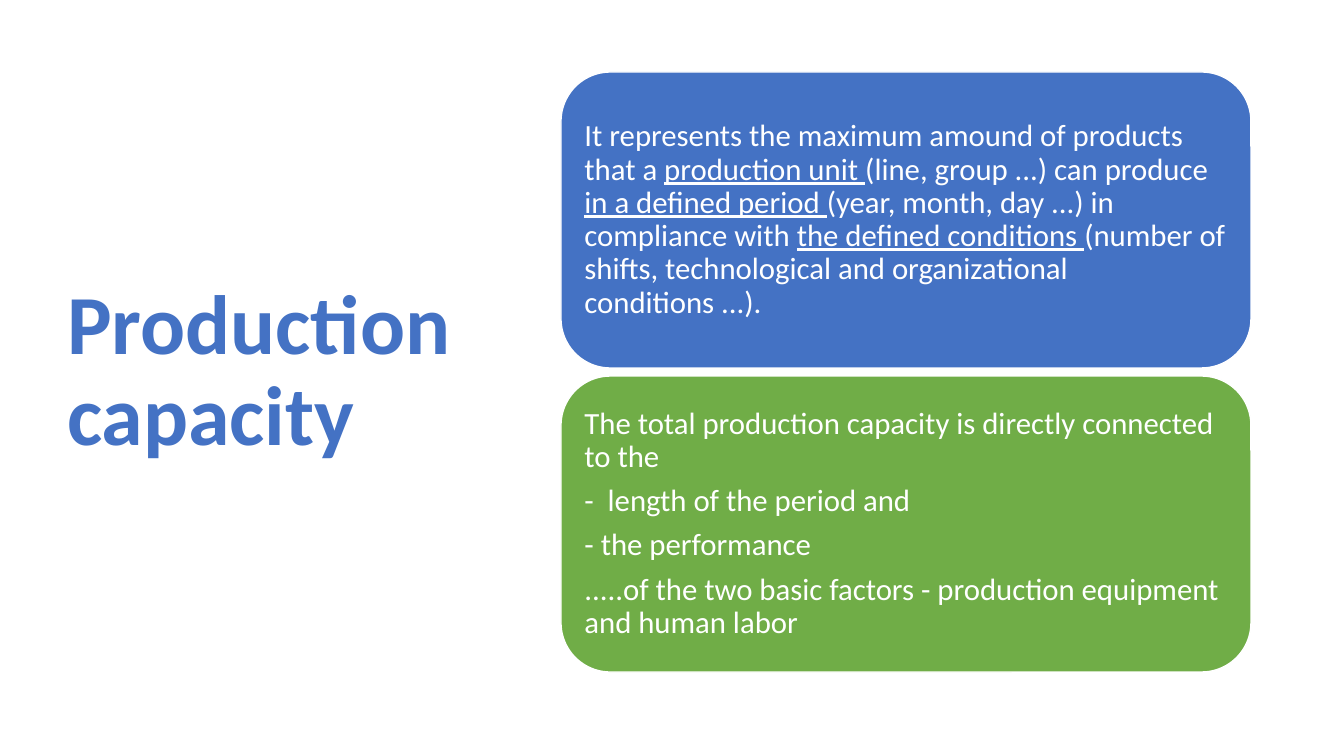
from pptx import Presentation
from pptx.dml.color import RGBColor
from pptx.enum.shapes import MSO_SHAPE
from pptx.enum.text import MSO_ANCHOR, MSO_AUTO_SIZE, PP_ALIGN
from pptx.util import Emu, Pt

ROUNDED = MSO_SHAPE.ROUNDED_RECTANGLE
MIDDLE = MSO_ANCHOR.MIDDLE
LEFT = PP_ALIGN.LEFT
NO_AUTOFIT = MSO_AUTO_SIZE.NONE

BLUE = RGBColor(0x44, 0x72, 0xC4)
GREEN = RGBColor(0x70, 0xAD, 0x47)
WHITE = RGBColor(0xFF, 0xFF, 0xFF)

FONT = "Calibri"
EMU_PER_PX = 914400 / 100.8
CARD_LEFT, CARD_TOP, CARD_W, CARD_H = 561, 72, 690, 296
CARD_PITCH = 304
CARD_INSET = 9

# Each card is a fill and its paragraphs; a paragraph is a list of (text, underlined).
CARDS = [
    (BLUE, [[
        ("It represents the maximum amound of products that a ", False),
        ("production unit ", True),
        ("(line, group ...) can produce ", False),
        ("in a defined period ", True),
        ("(year, month, day ...) in compliance with ", False),
        ("the defined conditions ", True),
        ("(number of shifts, technological and organizational conditions ...).", False),
    ]]),
    (GREEN, [
        [("The total production capacity is directly connected to the", False)],
        [("-  length of the period and", False)],
        [("- the performance", False)],
        [(".....of the two basic factors - production equipment and human labor", False)],
    ]),
]


def px(n):
    return Emu(round(n * EMU_PER_PX))


def style_run(r, size, color):
    r.font.name = FONT
    r.font.size = Pt(size)
    r.font.color.rgb = color


def set_title(s, text):
    sp = s.shapes.title
    sp.left, sp.top, sp.width, sp.height = px(57), px(69), px(419), px(607)
    tf = sp.text_frame
    tf.text = text
    tf.word_wrap = True
    tf.auto_size = NO_AUTOFIT
    tf.vertical_anchor = MIDDLE
    p = tf.paragraphs[0]
    p.alignment = LEFT
    p.line_spacing = 0.9
    r = p.runs[0]
    style_run(r, 60, BLUE)
    r.font.bold = True


def add_card(s, top, fill, paragraphs):
    sp = s.shapes.add_shape(ROUNDED, px(CARD_LEFT), px(top), px(CARD_W), px(CARD_H))
    sp.shadow.inherit = False
    sp.fill.solid()
    sp.fill.fore_color.rgb = fill
    sp.line.color.rgb = WHITE
    sp.line.width = Pt(1)
    tf = sp.text_frame
    tf.word_wrap = True
    tf.vertical_anchor = MIDDLE
    tf.margin_left = tf.margin_right = px(CARD_INSET)
    tf.margin_top = tf.margin_bottom = px(CARD_INSET)
    for i, runs in enumerate(paragraphs):
        p = tf.add_paragraph() if i else tf.paragraphs[0]
        p.alignment = LEFT
        p.line_spacing = 0.9
        p.space_after = Pt(7.7)
        for text, underlined in runs:
            r = p.add_run()
            r.text = text
            style_run(r, 22, WHITE)
            r.font.underline = underlined


def main():
    prs = Presentation()
    prs.slide_width, prs.slide_height = px(1344), px(756)
    s = prs.slides.add_slide(prs.slide_layouts[5])
    set_title(s, "Production capacity")
    for i, (fill, paragraphs) in enumerate(CARDS):
        add_card(s, CARD_TOP + i * CARD_PITCH, fill, paragraphs)
    prs.save("out.pptx")


if __name__ == "__main__":
    main()
